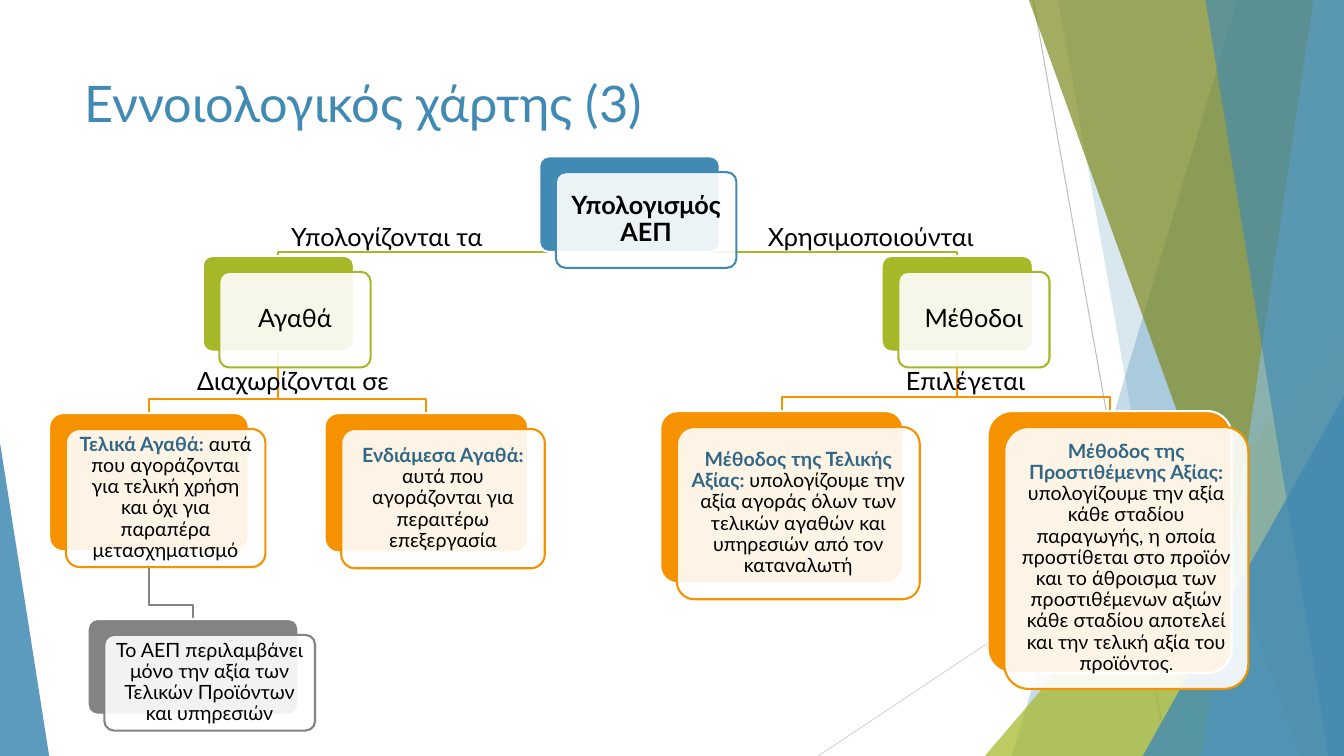
from collections import namedtuple

from lxml import etree
from pptx import Presentation
from pptx.dml.color import RGBColor
from pptx.enum.shapes import MSO_CONNECTOR, MSO_SHAPE
from pptx.enum.text import MSO_ANCHOR as Anchor, PP_ALIGN as Align
from pptx.oxml.ns import qn
from pptx.util import Cm, Pt

WIDTH, HEIGHT = 33.87, 19.05
BLUE, GREEN, ORANGE, GRAY = "418AB3", "A6B727", "F69200", "838383"
BLACK, WHITE, TERM = "000000", "FFFFFF", "316886"

Box = namedtuple("Box", "left top width height")
Card = namedtuple("Card", "box colour parent runs")  # runs: (text, size, colour, bold)

CARDS = {
    "gdp": Card(Box(13.59, 3.94, 4.55, 2.41), BLUE, None,
                [("Υπολογισμός ΑΕΠ", 18, BLACK, True)]),
    "goods": Card(Box(5.11, 6.45, 3.81, 2.41), GREEN, "gdp",
                  [("Αγαθά", 18, BLACK, False)]),
    "methods": Card(Box(22.22, 6.45, 3.81, 2.41), GREEN, "gdp",
                    [("Μέθοδοι", 18, BLACK, False)]),
    "final_goods": Card(
        Box(1.24, 10.41, 5.03, 3.48), ORANGE, "goods",
        [("Τελικά Αγαθά: ", 14, TERM, True),
         ("αυτά που αγοράζονται για τελική χρήση και όχι για παραπέρα "
          "μετασχηματισμό", 14, BLACK, False)]),
    "gdp_scope": Card(
        Box(2.21, 15.6, 5.31, 2.41), GRAY, "final_goods",
        [("Το ΑΕΠ περιλαμβάνει μόνο την αξία των Τελικών Προϊόντων και υπηρεσιών",
          14, BLACK, False)]),
    "intermediate_goods": Card(
        Box(8.18, 10.41, 5.13, 3.51), ORANGE, "goods",
        [("Ενδιάμεσα Αγαθά: ", 14, TERM, True),
         ("αυτά που αγοράζονται για περαιτέρω επεξεργασία", 14, BLACK, False)]),
    "final_value": Card(
        Box(16.64, 10.36, 6.12, 4.34), ORANGE, "methods",
        [("Μέθοδος της Τελικής Αξίας: ", 14, TERM, True),
         ("υπολογίζουμε την αξία αγοράς όλων των τελικών αγαθών και υπηρεσιών "
          "από τον καταναλωτή", 14, BLACK, False)]),
    "added_value": Card(
        Box(24.89, 10.36, 6.15, 6.6), ORANGE, "methods",
        [("Μέθοδος της Προστιθέμενης Αξίας: ", 14, TERM, True),
         ("υπολογίζουμε την αξία κάθε σταδίου παραγωγής, η οποία προστίθεται στο "
          "προϊόν και το άθροισμα των προστιθέμενων αξιών κάθε σταδίου αποτελεί "
          "και την τελική αξία του προϊόντος", 14, BLACK, False),
         (".", 12, BLACK, False)]),
}

LINK_LABELS = [
    ("Υπολογίζονται τα", Box(7.09, 5.46, 5.46, 1.02)),
    ("Χρησιμοποιούνται", Box(19.1, 5.46, 5.79, 1.02)),
    ("Διαχωρίζονται σε", Box(4.72, 9.07, 5.66, 1.02)),
    ("Επιλέγεται", Box(22.58, 9.07, 3.81, 1.02)),
]


def rgb(colour):
    return RGBColor.from_string(colour)


def lengths(box):
    return [Cm(value) for value in box]


def paint(shape, fill=None, opacity=100, line=None):
    shape.shadow.inherit = False
    if fill:
        shape.fill.solid()
        shape.fill.fore_color.rgb = rgb(fill)
        if opacity < 100:
            tint = shape.fill._xPr.find(".//" + qn("a:srgbClr"))
            etree.SubElement(tint, qn("a:alpha")).set("val", str(opacity * 1000))
    else:
        shape.fill.background()
    if line:
        shape.line.color.rgb = rgb(line)
        shape.line.width = Pt(1.5)
    else:
        shape.line.fill.background()


def add_runs(paragraph, runs):
    for text, size, colour, bold in runs:
        run = paragraph.add_run()
        run.text = text
        font = run.font
        font.name, font.size, font.bold = "Lato", Pt(size), bold
        font.color.rgb = rgb(colour)


def add_outline(slide, points, closed):
    (x, y), *rest = [(Cm(x), Cm(y)) for x, y in points]
    builder = slide.shapes.build_freeform(x, y)
    builder.add_line_segments(rest, close=closed)
    return builder.convert_to_shape()


def add_ray(slide, start, end, colour):
    ray = slide.shapes.add_connector(
        MSO_CONNECTOR.STRAIGHT, *[Cm(value) for value in (*start, *end)])
    ray.line.color.rgb = rgb(colour)
    ray.line.width = Pt(0.75)
    etree.SubElement(ray._element.spPr, qn("a:effectLst"))


def add_facet(slide, top_x, bottom_x, colour, opacity):
    """Band from a slanted left edge to the right edge of the slide."""
    points = [(top_x, 0), (WIDTH, 0), (WIDTH, HEIGHT), (bottom_x, HEIGHT)]
    paint(add_outline(slide, points, True), colour, opacity)


def add_corner(slide, left, top, width, apex, colour, opacity):
    """Right-angled triangle standing on the bottom edge of the slide."""
    box = Box(left, top, width, HEIGHT - top)
    corner = slide.shapes.add_shape(MSO_SHAPE.ISOSCELES_TRIANGLE, *lengths(box))
    corner.adjustments[0] = apex
    paint(corner, colour, opacity)


def add_backdrop(slide):
    add_ray(slide, (26.04, 0), (29.42, HEIGHT), "BFBFBF")
    add_ray(slide, (WIDTH, 10.23), (20.62, HEIGHT), "D9D9D9")
    add_facet(slide, 31.19, 25.5, BLUE, 30)
    add_facet(slide, 26.67, 30.05, BLUE, 20)
    add_corner(slide, 24.82, 8.46, 9.05, 1, GREEN, 72)
    add_facet(slide, 25.93, 32.79, "7D891D", 70)
    add_facet(slide, 33.1, 30.28, "8ABAD4", 70)
    add_facet(slide, 30.38, 33.48, BLUE, 65)
    add_corner(slide, 28.8, 9.98, 5.07, 1, BLUE, 80)
    add_corner(slide, 0, 11.15, 1.24, 0, BLUE, 85)


def add_title(slide, box):
    title = slide.shapes.title
    title.left, title.top, title.width, title.height = lengths(box)
    title.text_frame.vertical_anchor = Anchor.TOP
    paragraph = title.text_frame.paragraphs[0]
    paragraph.alignment = Align.LEFT
    add_runs(paragraph, [("Εννοιολογικός χάρτης (3)", 36, BLUE, False)])


def add_branch(slide, parent, child, colour):
    """Elbow from the bottom centre of one box to the top centre of another."""
    start_x, end_x = (box.left + box.width / 2 for box in (parent, child))
    start_y = parent.top + parent.height
    bend_y = max(start_y, child.top - 0.36)
    points = [(start_x, start_y), (start_x, bend_y), (end_x, bend_y), (end_x, child.top)]
    if bend_y == start_y:
        points.pop(0)
    paint(add_outline(slide, points, False), line=colour)


def add_card(slide, card):
    """Coloured back plate with a shifted, nearly opaque front plate for the text."""
    box = card.box
    shifted = box._replace(left=box.left + 0.42, top=box.top + 0.4)
    for place, fill, opacity, line in ((box, card.colour, 100, WHITE),
                                       (shifted, WHITE, 90, card.colour)):
        plate = slide.shapes.add_shape(MSO_SHAPE.ROUNDED_RECTANGLE, *lengths(place))
        plate.adjustments[0] = 0.1
        paint(plate, fill, opacity, line)
    frame = plate.text_frame
    frame.word_wrap = True
    frame.vertical_anchor = Anchor.MIDDLE
    frame.margin_left = frame.margin_right = Cm(0.16)
    frame.margin_top = frame.margin_bottom = Cm(0.16)
    paragraph = frame.paragraphs[0]
    paragraph.alignment = Align.CENTER
    paragraph.line_spacing = 0.9
    add_runs(paragraph, card.runs)


def add_link_label(slide, text, box):
    frame = slide.shapes.add_textbox(*lengths(box)).text_frame
    frame.word_wrap = True
    add_runs(frame.paragraphs[0], [(text, 18, BLACK, False)])


def add_concept_map(slide):
    for card in CARDS.values():
        if card.parent:
            add_branch(slide, CARDS[card.parent].box, card.box, card.colour)
    for card in CARDS.values():
        add_card(slide, card)
    for text, box in LINK_LABELS:
        add_link_label(slide, text, box)


def main():
    deck = Presentation()
    deck.slide_width, deck.slide_height = Cm(WIDTH), Cm(HEIGHT)
    slide = deck.slides.add_slide(deck.slide_layouts[5])
    add_backdrop(slide)
    add_title(slide, Box(1.88, 1.7, 23.88, 2.29))
    add_concept_map(slide)
    deck.save("out.pptx")


if __name__ == "__main__":
    main()
